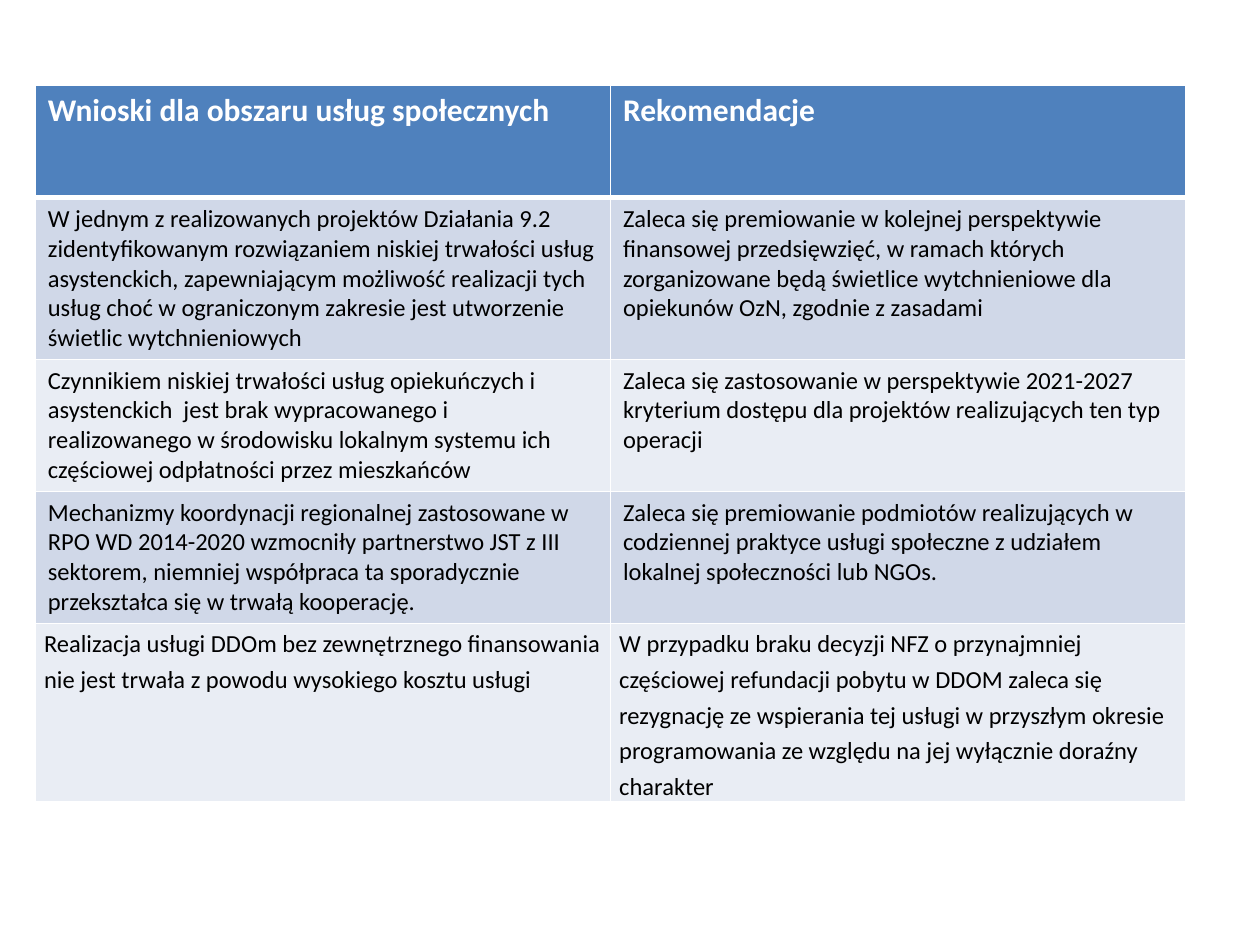
"""Build a slide with a table of findings and recommendations on social services."""
import pptx
import pptx.util
import pptx.dml.color
import pptx.oxml
import pptx.oxml.ns

theme = {
    "font": "Calibri", "head": "4F81BD", "bands": ["D0D8E8", "E9EDF4"],
    "light": "FFFFFF", "dark": "000000", "big": 18, "small": 14,
    "line": 1, "thick": 3,
}
inch = pptx.util.Inches
point = pptx.util.Pt
color = pptx.dml.color.RGBColor.from_string

rows = [
    ("Wnioski dla obszaru usług społecznych", "Rekomendacje"),
    ("W jednym z realizowanych projektów Działania 9.2 zidentyfikowanym rozwiązaniem "
     "niskiej trwałości usług asystenckich, zapewniającym możliwość realizacji tych usług "
     "choć w ograniczonym zakresie jest utworzenie świetlic wytchnieniowych",
     "Zaleca się premiowanie w kolejnej perspektywie finansowej przedsięwzięć, w ramach "
     "których zorganizowane będą świetlice wytchnieniowe dla opiekunów OzN, zgodnie z zasadami"),
    ("Czynnikiem niskiej trwałości usług opiekuńczych i asystenckich  jest brak "
     "wypracowanego i realizowanego w środowisku lokalnym systemu ich częściowej "
     "odpłatności przez mieszkańców",
     "Zaleca się zastosowanie w perspektywie 2021-2027 kryterium dostępu dla projektów "
     "realizujących ten typ operacji"),
    ("Mechanizmy koordynacji regionalnej zastosowane w RPO WD 2014-2020 wzmocniły "
     "partnerstwo JST z III sektorem, niemniej współpraca ta sporadycznie przekształca się "
     "w trwałą kooperację.",
     "Zaleca się premiowanie podmiotów realizujących w codziennej praktyce usługi społeczne "
     "z udziałem lokalnej społeczności lub NGOs."),
    ("Realizacja usługi DDOm bez zewnętrznego finansowania nie jest trwała z powodu "
     "wysokiego kosztu usługi",
     "W przypadku braku decyzji NFZ o przynajmniej częściowej refundacji pobytu w DDOM "
     "zaleca się rezygnację ze wspierania tej usługi w przyszłym okresie programowania ze "
     "względu na jej wyłącznie doraźny charakter"),
]
heights = [0.89, 1.27, 1.03, 1.03, 1.4]


def write(cell, text, size, ink, bold=False, loose=False):
    para = cell.text_frame.paragraphs[0]
    run = para.add_run()
    run.text = text
    run.font.name = theme["font"]
    run.font.size = point(size)
    run.font.bold = bold
    run.font.color.rgb = color(ink)
    if loose:
        para.line_spacing = 1.2
        para.space_before = para.space_after = point(6)
        cell.margin_left = cell.margin_right = inch(0.07)
        cell.margin_top = cell.margin_bottom = 0


def edge(cell, side, width):
    props = cell._tc.get_or_add_tcPr()
    line = pptx.oxml.parse_xml(
        f'<a:ln{side} {pptx.oxml.ns.nsdecls("a")} w="{point(width)}"><a:solidFill>'
        f'<a:srgbClr val="{theme["light"]}"/></a:solidFill></a:ln{side}>')
    props.insert("LRTB".index(side), line)


deck = pptx.Presentation()
deck.slide_width, deck.slide_height = inch(10), inch(7.5)
slide = deck.slides.add_slide(deck.slide_layouts[6])
table = slide.shapes.add_table(
    len(rows), 2, inch(0.28), inch(0.68), inch(9.13), inch(sum(heights))).table

for r, pair in enumerate(rows):
    table.rows[r].height = inch(heights[r])
    head = r == 0
    for c, text in enumerate(pair):
        cell = table.cell(r, c)
        cell.fill.solid()
        cell.fill.fore_color.rgb = color(theme["head"] if head else theme["bands"][(r - 1) % 2])
        for side in "LRTB":
            rule = (head and side == "B") or (r == 1 and side == "T")
            edge(cell, side, theme["thick" if rule else "line"])
        write(cell, text, theme["big" if head else "small"],
              theme["light" if head else "dark"], bold=head, loose=r == len(rows) - 1)

deck.save("out.pptx")
